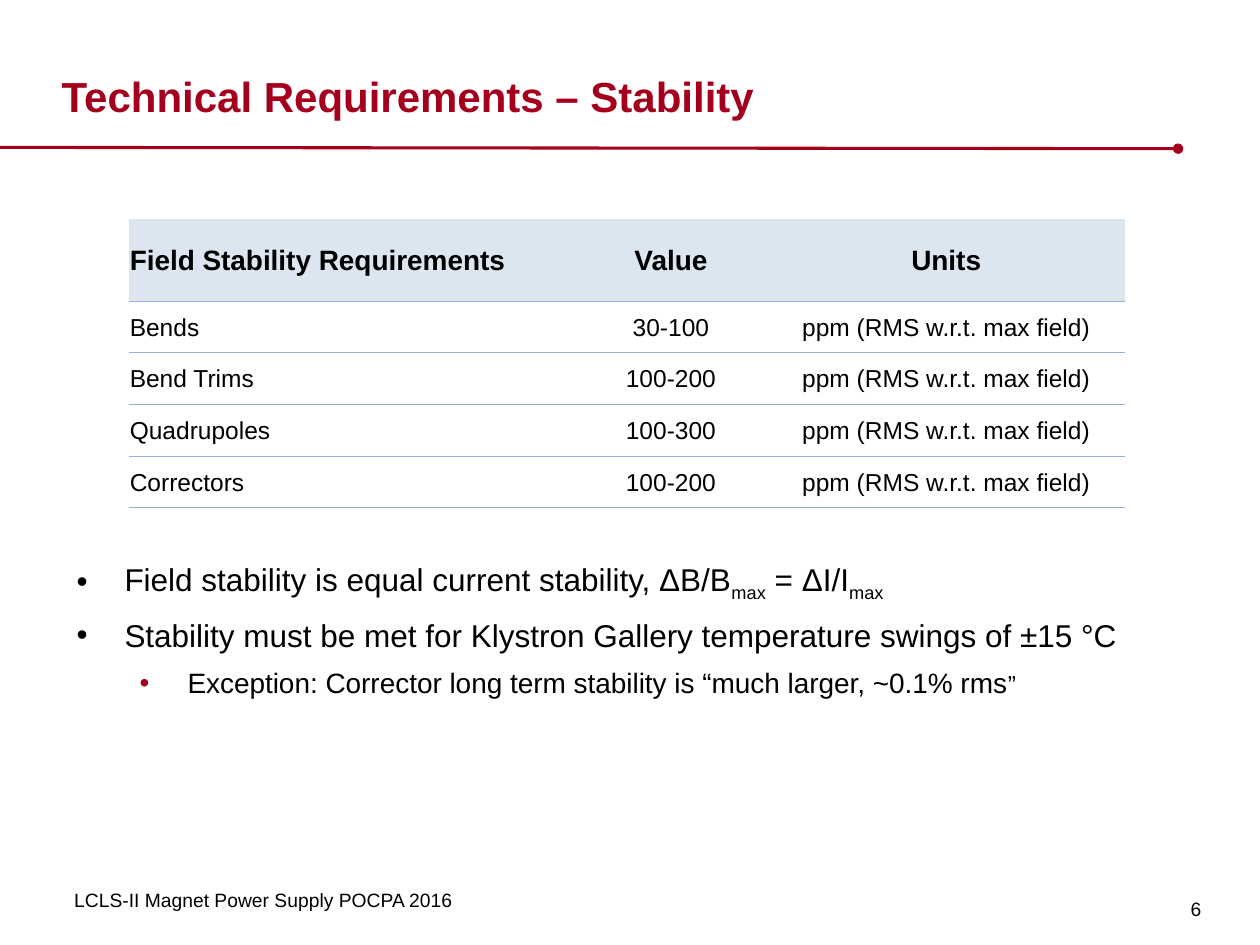
from lxml.etree import SubElement
from pptx import Presentation
from pptx.dml.color import RGBColor
from pptx.enum.shapes import MSO_CONNECTOR
from pptx.enum.text import MSO_ANCHOR, PP_ALIGN
from pptx.oxml import parse_xml
from pptx.oxml.ns import nsdecls, qn
from pptx.util import Inches, Pt

RED, BLACK, HEADER_FILL, RULE = "A4001D", "000000", "DCE6F1", "95B3D7"


def color(hex_string):
    return RGBColor.from_string(hex_string)


def write(paragraph, text, size=18, hex_color=BLACK, bold=False, align=PP_ALIGN.LEFT, baseline=0):
    """Append one formatted run to the paragraph."""
    paragraph.alignment = align
    run = paragraph.add_run()
    run.text = text
    run.font.name = "Arial"
    run.font.size = Pt(size)
    run.font.bold = bold
    run.font.color.rgb = color(hex_color)
    if baseline:
        run.font._element.set("baseline", str(baseline * 1000))


presentation = Presentation()
presentation.slide_width = Inches(10)
presentation.slide_height = Inches(7.5)
slide = presentation.slides.add_slide(presentation.slide_layouts[6])

# Red rule under the title, ending in a dot
rule = slide.shapes.add_connector(
    MSO_CONNECTOR.STRAIGHT, Inches(0), Inches(1.17), Inches(9.35), Inches(1.18))
rule.line.color.rgb = color(RED)
rule.line.width = Pt(1.75)
SubElement(rule.line._get_or_add_ln(), qn("a:tailEnd"), type="oval")
SubElement(rule._element.spPr, qn("a:effectLst"))

# Title, footer and slide number: text, box, margins, anchor, format
labels = [
    ("Technical Requirements – Stability", (0.49, 0.14, 8.86, 0.82), (0, 0, 0, 0),
     MSO_ANCHOR.BOTTOM, {"size": 24, "hex_color": RED, "bold": True}),
    ("LCLS-II Magnet Power Supply POCPA 2016", (0.49, 7, 4.51, 0.34), (0.1, 0.05, 0.1, 0.05),
     MSO_ANCHOR.TOP, {"size": 11}),
    ("6", (9.37, 6.91, 0.35, 0.59), (0.08, 0.06, 0.08, 0.05),
     MSO_ANCHOR.MIDDLE, {"size": 11}),
]
for text, box, margins, anchor, text_format in labels:
    frame = slide.shapes.add_textbox(*map(Inches, box)).text_frame
    frame.word_wrap = True
    frame.vertical_anchor = anchor
    (frame.margin_left, frame.margin_top,
     frame.margin_right, frame.margin_bottom) = map(Inches, margins)
    write(frame.paragraphs[0], text, **text_format)

# Stability table
units = "ppm (RMS w.r.t. max field)"
rows = [
    ("Field Stability Requirements", "Value", "Units"),
    ("Bends", "30-100", units),
    ("Bend Trims", "100-200", units),
    ("Quadrupoles", "100-300", units),
    ("Correctors", "100-200", units),
]
table = slide.shapes.add_table(
    len(rows), 3, Inches(1.02), Inches(1.74), Inches(7.91), Inches(2.29)).table
table.horz_banding = False
for column, width in zip(table.columns, (3.54, 1.53, 2.84)):
    column.width = Inches(width)

for row_index, row in enumerate(rows):
    is_header = row_index == 0
    table.rows[row_index].height = Inches(0.65 if is_header else 0.41)
    for column_index, text in enumerate(row):
        cell = table.cell(row_index, column_index)
        cell.vertical_anchor = MSO_ANCHOR.MIDDLE
        cell.margin_left = cell.margin_right = cell.margin_top = Inches(0.01)
        cell.margin_bottom = 0
        if is_header:
            cell.fill.solid()
            cell.fill.fore_color.rgb = color(HEADER_FILL)
        else:
            cell.fill.background()
        write(cell.text_frame.paragraphs[0], text, size=16 if is_header else 14,
              bold=is_header, align=PP_ALIGN.CENTER if column_index else PP_ALIGN.LEFT)
        # Horizontal rules only; borders precede the fill
        ruled_sides = "B" if is_header else "TB"
        for position, side in enumerate("LRTB"):
            paint = (f'<a:solidFill><a:srgbClr val="{RULE}"/></a:solidFill>'
                     if side in ruled_sides else "<a:noFill/>")
            cell._tc.get_or_add_tcPr().insert(position, parse_xml(
                f'<a:ln{side} {nsdecls("a")} w="{Pt(0.5)}">{paint}</a:ln{side}>'))

# Bullets: level, left indent, bullet colour, space after, runs
bullets = [
    (0, 0.38, BLACK, 3, [
        ("Field stability is equal current stability, ΔB/B", {}), ("max", {"baseline": -25}),
        (" = ΔI/I", {}), ("max", {"baseline": -25})]),
    (0, 0.38, BLACK, 3, [
        ("Stability must be met for Klystron Gallery temperature swings of ±15 °C", {})]),
    (1, 0.88, RED, 0, [
        ("Exception: Corrector long term stability is “much larger, ~0.1% rms", {"size": 16}),
        ("”", {"size": 14})]),
]
body = slide.shapes.add_textbox(Inches(0.51), Inches(4.33), Inches(8.82), Inches(2.41)).text_frame
body.word_wrap = True
for index, (level, indent, bullet_color, space_after, runs) in enumerate(bullets):
    paragraph = body.add_paragraph() if index else body.paragraphs[0]
    paragraph.level = level
    paragraph.line_spacing = 1.2
    paragraph.space_after = Pt(space_after)
    properties = paragraph._p.get_or_add_pPr()
    properties.set("marL", str(Inches(indent)))
    properties.set("indent", str(Inches(-0.38)))
    SubElement(SubElement(properties, qn("a:buClr")), qn("a:srgbClr"), val=bullet_color)
    SubElement(properties, qn("a:buFont"), typeface="Arial")
    SubElement(properties, qn("a:buChar"), char="•")
    for text, text_format in runs:
        write(paragraph, text, **text_format)

presentation.save("out.pptx")
